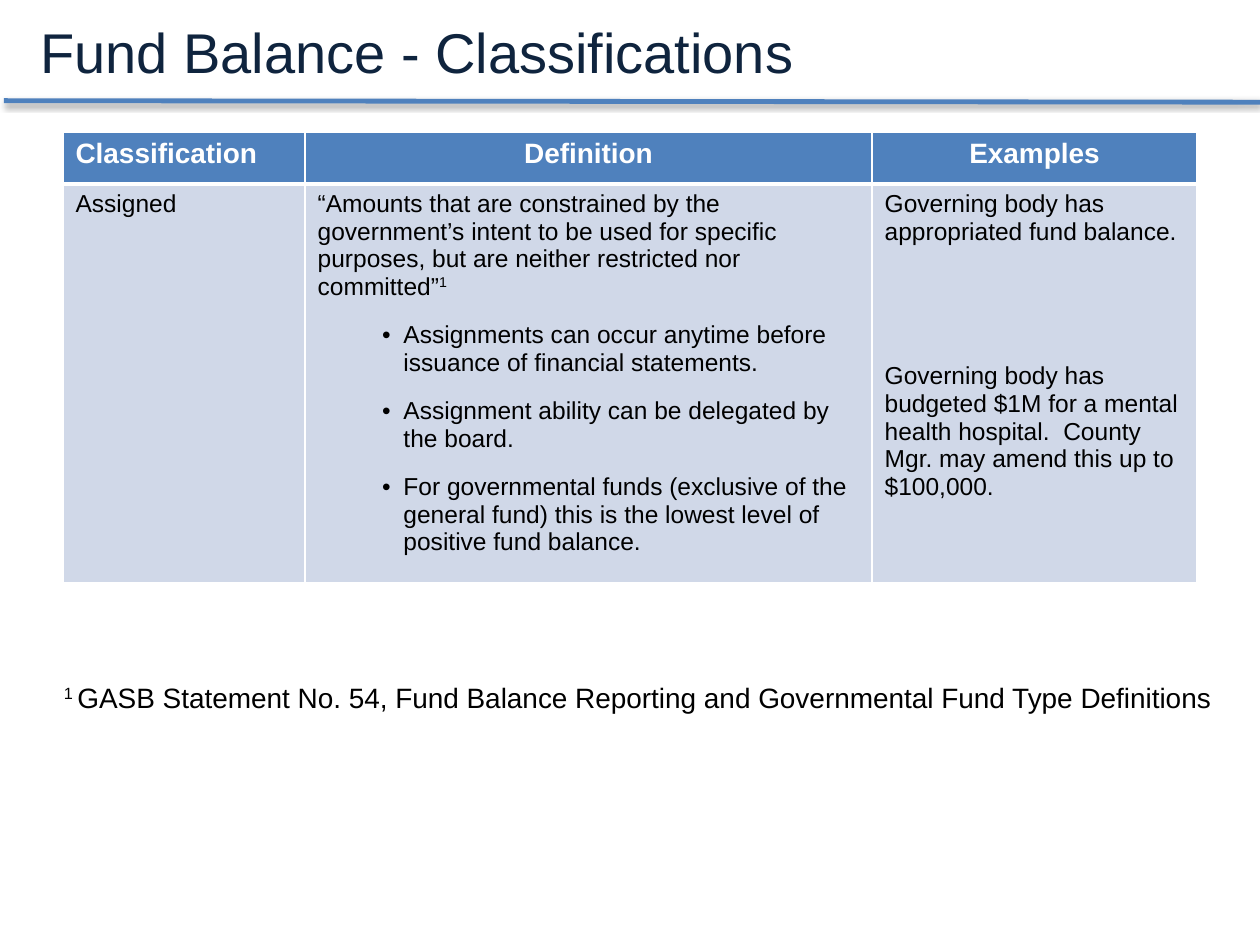
from dataclasses import dataclass
from typing import Any

from lxml import etree
from pptx import Presentation, util as u
from pptx.dml.color import RGBColor
from pptx.enum import shapes, text
from pptx.oxml import ns

NAVY = RGBColor(0x0F, 0x24, 0x3E)
BLUE = RGBColor(0x4F, 0x81, 0xBD)
PALE_BLUE = RGBColor(0xD0, 0xD8, 0xE8)
WHITE = RGBColor(0xFF, 0xFF, 0xFF)
BLACK = RGBColor(0x00, 0x00, 0x00)
FONT = "Arial"
LEFT, CENTER = text.PP_ALIGN.LEFT, text.PP_ALIGN.CENTER


@dataclass(frozen=True)
class Run:
    words: str
    superscript: bool = False


@dataclass(frozen=True)
class Line:
    runs: tuple[Run, ...]
    alignment: Any = LEFT
    gap: float = 12
    bullet: bool = False


@dataclass(frozen=True)
class Style:
    size: float
    color: RGBColor
    bold: bool = False


@dataclass(frozen=True)
class Label:
    left: float
    top: float
    width: float
    height: float
    wrap: bool
    style: Style
    line: Line


@dataclass(frozen=True)
class Row:
    height: float
    fill: RGBColor
    style: Style
    borders: dict[str, float]
    cells: tuple[tuple[Line, ...], ...]


def plain(words: str, **options: Any) -> Line:
    return Line((Run(words),), **options)


def apply_format(target: Any, values: dict[str, Any]) -> None:
    for name, value in values.items():
        setattr(target, name, value)


def add_child(parent: Any, tag: str, **attributes: Any) -> Any:
    values = {name: str(value) for name, value in attributes.items()}
    return etree.SubElement(parent, ns.qn(tag), values)


def write_lines(frame: Any, lines: tuple[Line, ...], style: Style) -> None:
    for index, line in enumerate(lines):
        paragraph = frame.add_paragraph() if index else frame.paragraphs[0]
        paragraph.alignment = line.alignment
        if line.bullet:
            paragraph.level = 1
            properties = paragraph._p.get_or_add_pPr()
            properties.set("marL", str(u.Cm(1.73)))
            properties.set("indent", str(u.Cm(-0.43)))
            add_child(properties, "a:buFont", typeface=FONT)
            add_child(properties, "a:buChar", char="•")
        if index:
            paragraph.space_before = u.Pt(line.gap)
        for part in line.runs:
            run = paragraph.add_run()
            run.text = part.words
            apply_format(run.font, {"name": FONT, "size": u.Pt(style.size), "bold": style.bold})
            run.font.color.rgb = style.color
            if part.superscript:
                run._r.get_or_add_rPr().set("baseline", "30000")


def add_label(slide: Any, label: Label) -> None:
    box = slide.shapes.add_textbox(*map(u.Cm, (label.left, label.top, label.width, label.height)))
    apply_format(box.text_frame, {
        "word_wrap": label.wrap,
        "auto_size": text.MSO_AUTO_SIZE.SHAPE_TO_FIT_TEXT,
    })
    write_lines(box.text_frame, (label.line,), label.style)


def add_title_rule(slide: Any) -> None:
    rule = slide.shapes.add_connector(
        shapes.MSO_CONNECTOR.STRAIGHT, u.Cm(0.08), u.Cm(2.03), u.Cm(25.4), u.Cm(2.06))
    rule.line.color.rgb = BLUE
    rule.line.width = u.Pt(2.75)
    effects = add_child(rule._element.spPr, "a:effectLst")
    shadow = add_child(effects, "a:outerShdw", blurRad=u.Pt(3.1), dist=u.Pt(1.6),
                       dir=90 * 60000, rotWithShape=0)
    color = add_child(shadow, "a:srgbClr", val=BLACK)
    add_child(color, "a:alpha", val=38000)


def add_borders(cell: Any, widths: dict[str, float]) -> None:
    properties = cell._tc.get_or_add_tcPr()
    for side, width in widths.items():
        border = add_child(properties, f"a:ln{side}", w=u.Pt(width))
        add_child(add_child(border, "a:solidFill"), "a:srgbClr", val=WHITE)


def add_classification_table(slide: Any, widths: tuple[float, ...], rows: tuple[Row, ...]) -> None:
    height = sum(row.height for row in rows)
    table = slide.shapes.add_table(
        len(rows), len(widths), u.Cm(1.27), u.Cm(2.67), u.Cm(sum(widths)), u.Cm(height)).table
    table.horz_banding = False
    for column, width in zip(table.columns, widths):
        column.width = u.Cm(width)
    for table_row, row in zip(table.rows, rows):
        table_row.height = u.Cm(row.height)
        for cell, lines in zip(table_row.cells, row.cells):
            add_borders(cell, row.borders)
            cell.fill.solid()
            cell.fill.fore_color.rgb = row.fill
            write_lines(cell.text_frame, lines, row.style)


# Wording and layout
TITLE = Label(0.56, 0.23, 15.85, 1.63, False, Style(32, NAVY),
              plain("Fund Balance - Classifications"))
FOOTNOTE = Label(1.04, 13.59, 24.33, 0.94, True, Style(16, BLACK), Line((
    Run("1 ", superscript=True),
    Run("GASB Statement No. 54, Fund Balance Reporting and Governmental Fund Type Definitions"),
)))
COLUMN_WIDTHS = (4.88, 11.43, 6.55)
HEADER = Row(1.04, BLUE, Style(16, WHITE, bold=True), {"L": 1, "R": 1, "T": 1, "B": 3}, (
    (plain("Classification"),),
    (plain("Definition", alignment=CENTER),),
    (plain("Examples", alignment=CENTER),),
))
ASSIGNED = Row(8.03, PALE_BLUE, Style(14, BLACK), {"L": 1, "R": 1, "T": 3, "B": 1}, (
    (plain("Assigned"),),
    (
        Line((
            Run("“Amounts that are constrained by the government’s intent to be used for "
                "specific purposes, but are neither restricted nor committed”"),
            Run("1", superscript=True),
        )),
        plain("Assignments can occur anytime before issuance of financial statements.",
              bullet=True),
        plain("Assignment ability can be delegated by the board.", bullet=True),
        plain("For governmental funds (exclusive of the general fund) this is the lowest "
              "level of positive fund balance.", bullet=True),
    ),
    (
        plain("Governing body has appropriated fund balance."),
        plain("Governing body has budgeted $1M for a mental health hospital.  County Mgr. "
              "may amend this up to $100,000.", gap=67),
    ),
))


def main() -> None:
    presentation = Presentation()
    apply_format(presentation, {"slide_width": u.Cm(25.4), "slide_height": u.Cm(19.05)})
    slide = presentation.slides.add_slide(presentation.slide_layouts[6])

    # Heading
    add_title_rule(slide)
    add_label(slide, TITLE)

    # Footnote and table
    add_label(slide, FOOTNOTE)
    add_classification_table(slide, COLUMN_WIDTHS, (HEADER, ASSIGNED))

    presentation.save("out.pptx")


if __name__ == "__main__":
    main()
